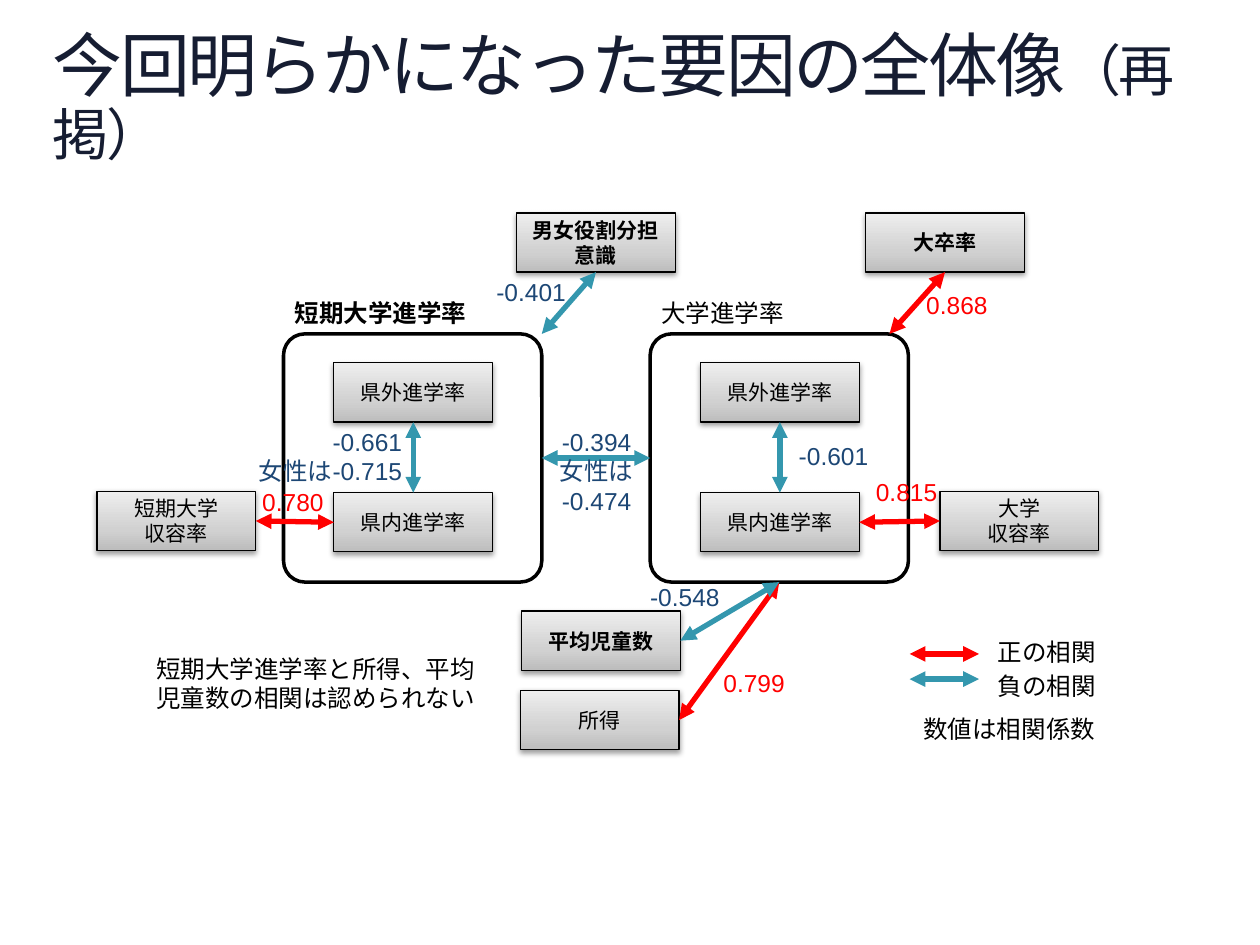
import copy
from dataclasses import dataclass

import pptx
import pptx.dml.color
import pptx.enum.shapes
import pptx.enum.text
import pptx.oxml
import pptx.oxml.ns
import pptx.util
from pptx.util import Inches

RGB = pptx.dml.color.RGBColor.from_string
SHAPE = pptx.enum.shapes.MSO_SHAPE
ALIGN = pptx.enum.text.PP_ALIGN
AUTO_SIZE = pptx.enum.text.MSO_AUTO_SIZE
ANCHOR = pptx.enum.text.MSO_ANCHOR
NAMESPACE = pptx.oxml.ns.nsdecls("a")


@dataclass(frozen=True)
class Theme:
    title: str = "161D32"
    ink: str = "000000"
    positive: str = "FF0000"
    negative: str = "3497AE"
    negative_text: str = "1D4775"
    box_stops: tuple = ((0, "BDBDBD"), (0.35, "D1D1D1"), (1, "EEEEEE"))
    title_size: int = 40
    title_small_size: int = 32
    label_size: int = 14
    box_size: int = 12
    label_font: str = "Calibri"
    value_font: str = "Arial"
    box_font: str = "Karla"


theme = Theme()


def write_text(text_frame, text, color, alignment=ALIGN.LEFT, **format_values):
    text_frame.text = text
    for paragraph in text_frame.paragraphs:
        paragraph.alignment = alignment
        for run in paragraph.runs:
            run.font.color.rgb = RGB(color)
            for name, value in format_values.items():
                setattr(run.font, name, value)


def add_arrow(start, end, color):
    ends = [(0, 0) if isinstance(point[0], pptx.shapes.autoshape.Shape)
            else (Inches(point[0]), Inches(point[1])) for point in (start, end)]
    connector = slide.shapes.add_connector(
        pptx.enum.shapes.MSO_CONNECTOR.STRAIGHT, *ends[0], *ends[1])
    for point, connect in ((start, connector.begin_connect), (end, connector.end_connect)):
        if isinstance(point[0], pptx.shapes.autoshape.Shape):
            connect(*point)
    connector.line.color.rgb = RGB(color)
    connector.line.width = pptx.util.Pt(3)
    line = connector.line._get_or_add_ln()
    for tag in ("headEnd", "tailEnd"):
        line.append(pptx.oxml.parse_xml(f'<a:{tag} {NAMESPACE} type="triangle"/>'))
    connector._element.spPr.append(pptx.oxml.parse_xml(f"<a:effectLst {NAMESPACE}/>"))


presentation = pptx.Presentation()
presentation.slide_width = Inches(10)
presentation.slide_height = Inches(7.5)
slide = presentation.slides.add_slide(presentation.slide_layouts[5])

title = slide.shapes.title
title_place = {"left": 0.42, "top": 0.25, "width": 9.17, "height": 0.61}
for name, value in title_place.items():
    setattr(title, name, Inches(value))
title_format = {"margin_left": 0, "margin_top": 0, "margin_right": 0, "margin_bottom": 0,
                "word_wrap": True, "vertical_anchor": ANCHOR.TOP,
                "auto_size": AUTO_SIZE.SHAPE_TO_FIT_TEXT}
for name, value in title_format.items():
    setattr(title.text_frame, name, value)
paragraph = title.text_frame.paragraphs[0]
paragraph.alignment = ALIGN.LEFT
paragraph.line_spacing = 0.9
for text, size in (("今回明らかになった要因の全体像", theme.title_size),
                   ("（再掲）", theme.title_small_size)):
    run = paragraph.add_run()
    run.text = text
    run.font.name = theme.label_font
    run.font.size = pptx.util.Pt(size)
    run.font.color.rgb = RGB(theme.title)
    run.font._element.set("spc", "-150")

BOX_WIDTH, BOX_HEIGHT = 1.26, 0.47
COLLEGE_LEFT, UNIVERSITY_LEFT = 2.25, 5.16
frames = {}
boxes = {}
box_rows = [
    ("gender roles", "男女役割分担意識", 4.1, 1.69, True),
    ("graduates", "大卒率", 6.87, 1.69, True),
    ("college capacity", "短期大学\v収容率", 0.77, 3.9, False),
    ("university capacity", "大学\n収容率", 7.46, 3.9, False),
    ("children", "平均児童数", 4.14, 4.85, True),
    ("income", "所得", 4.13, 5.48, False),
]
for school, left in (("college", COLLEGE_LEFT), ("university", UNIVERSITY_LEFT)):
    frame = slide.shapes.add_shape(
        SHAPE.ROUNDED_RECTANGLE, Inches(left), Inches(2.65), Inches(2.05), Inches(1.97))
    frame.adjustments[0] = 0.086
    frame.shadow.inherit = False
    frame.fill.background()
    frame.line.color.rgb = RGB(theme.ink)
    frame.line.width = pptx.util.Pt(2)
    frames[school] = frame
    box_rows += [(school + " outside", "県外進学率", left + 0.4, 2.88, False),
                 (school + " inside", "県内進学率", left + 0.4, 3.91, False)]

for key, text, left, top, bold in box_rows:
    box = slide.shapes.add_shape(
        SHAPE.RECTANGLE, Inches(left), Inches(top), Inches(BOX_WIDTH), Inches(BOX_HEIGHT))
    box.fill.gradient()
    stop_list = box._element.spPr.find(".//" + pptx.oxml.ns.qn("a:gsLst"))
    stop_list.insert(1, copy.deepcopy(stop_list[0]))
    for stop, (position, color) in zip(box.fill.gradient_stops, theme.box_stops):
        stop.position = position
        stop.color.rgb = RGB(color)
    box.fill.gradient_angle = 90
    box.line.color.rgb = RGB(theme.ink)
    box.line.width = pptx.util.Pt(0.75)
    box.shadow.inherit = False
    box._element.spPr.find(pptx.oxml.ns.qn("a:effectLst")).append(pptx.oxml.parse_xml(
        f'<a:outerShdw {NAMESPACE} blurRad="40000" dist="20000" dir="5400000" rotWithShape="0">'
        f'<a:srgbClr val="{theme.ink}"><a:alpha val="38000"/></a:srgbClr></a:outerShdw>'))
    box.text_frame.word_wrap = True
    box.text_frame.vertical_anchor = ANCHOR.MIDDLE
    write_text(box.text_frame, text, theme.ink, ALIGN.CENTER, name=theme.box_font,
               size=pptx.util.Pt(theme.box_size), bold=bold)
    boxes[key] = box

TOP, LEFT, BOTTOM, RIGHT = range(4)
arrows = [
    ((boxes["university capacity"], LEFT), (boxes["university inside"], RIGHT), theme.positive),
    ((frames["university"], BOTTOM), (boxes["income"], RIGHT), theme.positive),
    ((boxes["college inside"], LEFT), (boxes["college capacity"], RIGHT), theme.positive),
    ((boxes["graduates"], BOTTOM), (7.06, 2.65), theme.positive),
    ((7.77, 5.19), (7.22, 5.19), theme.positive),
    ((7.77, 5.39), (7.22, 5.39), theme.negative),
    ((boxes["college outside"], BOTTOM), (boxes["college inside"], TOP), theme.negative),
    ((boxes["university outside"], BOTTOM), (boxes["university inside"], TOP), theme.negative),
    ((frames["college"], RIGHT), (frames["university"], LEFT), theme.negative),
    ((boxes["children"], RIGHT), (frames["university"], BOTTOM), theme.negative),
    ((boxes["gender roles"], BOTTOM), (4.3, 2.65), theme.negative),
]
for start, end, color in arrows:
    add_arrow(start, end, color)

label_format = {"name": theme.label_font, "color": theme.ink}
bold_format = {**label_format, "bold": True}
positive_format = {"name": theme.value_font, "color": theme.positive, "alignment": ALIGN.CENTER}
negative_format = {**positive_format, "color": theme.negative_text}
right_format = {**negative_format, "alignment": ALIGN.RIGHT}
labels = [
    ("短期大学進学率", 2.24, 2.32, 1.61, 0.34, bold_format),
    ("大学進学率", 5.15, 2.32, 1.32, 0.34, label_format),
    ("正の相関", 7.82, 5.01, 0.99, 0.34, label_format),
    ("負の相関", 7.82, 5.28, 0.99, 0.34, label_format),
    ("数値は相関係数", 7.23, 5.62, 1.58, 0.34, label_format),
    ("短期大学進学率と所得、平均児童数の相関は認められない", 1.14, 5.14, 2.77, 0.57, label_format),
    ("-0.601", 6.22, 3.45, 0.79, 0.34, negative_format),
    ("0.815", 6.8, 3.74, 0.79, 0.34, positive_format),
    ("-0.394\n女性は\n-0.474", 4.34, 3.34, 0.79, 0.81, negative_format),
    ("-0.661\v女性は-0.715", 1.85, 3.34, 1.44, 0.57, right_format),
    ("0.780", 1.93, 3.82, 0.79, 0.34, positive_format),
    ("0.799", 5.59, 5.25, 0.79, 0.34, positive_format),
    ("-0.548", 5.04, 4.57, 0.79, 0.34, negative_format),
    ("0.868", 7.2, 2.25, 0.79, 0.34, positive_format),
    ("-0.401", 3.82, 2.15, 0.79, 0.34, negative_format),
]
for text, left, top, width, height, format_values in labels:
    label = slide.shapes.add_textbox(Inches(left), Inches(top), Inches(width), Inches(height))
    label.text_frame.word_wrap = True
    label.text_frame.auto_size = AUTO_SIZE.SHAPE_TO_FIT_TEXT
    write_text(label.text_frame, text, size=pptx.util.Pt(theme.label_size), **format_values)

presentation.save("out.pptx")
